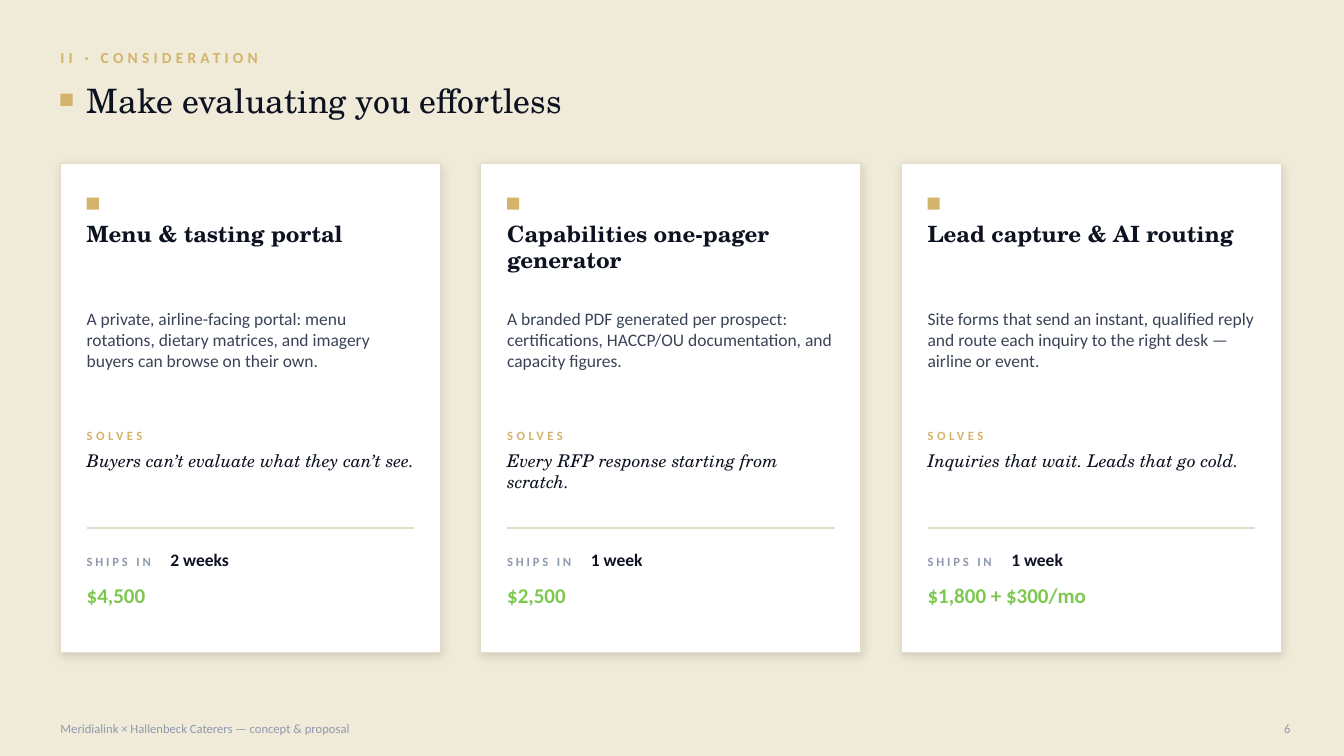
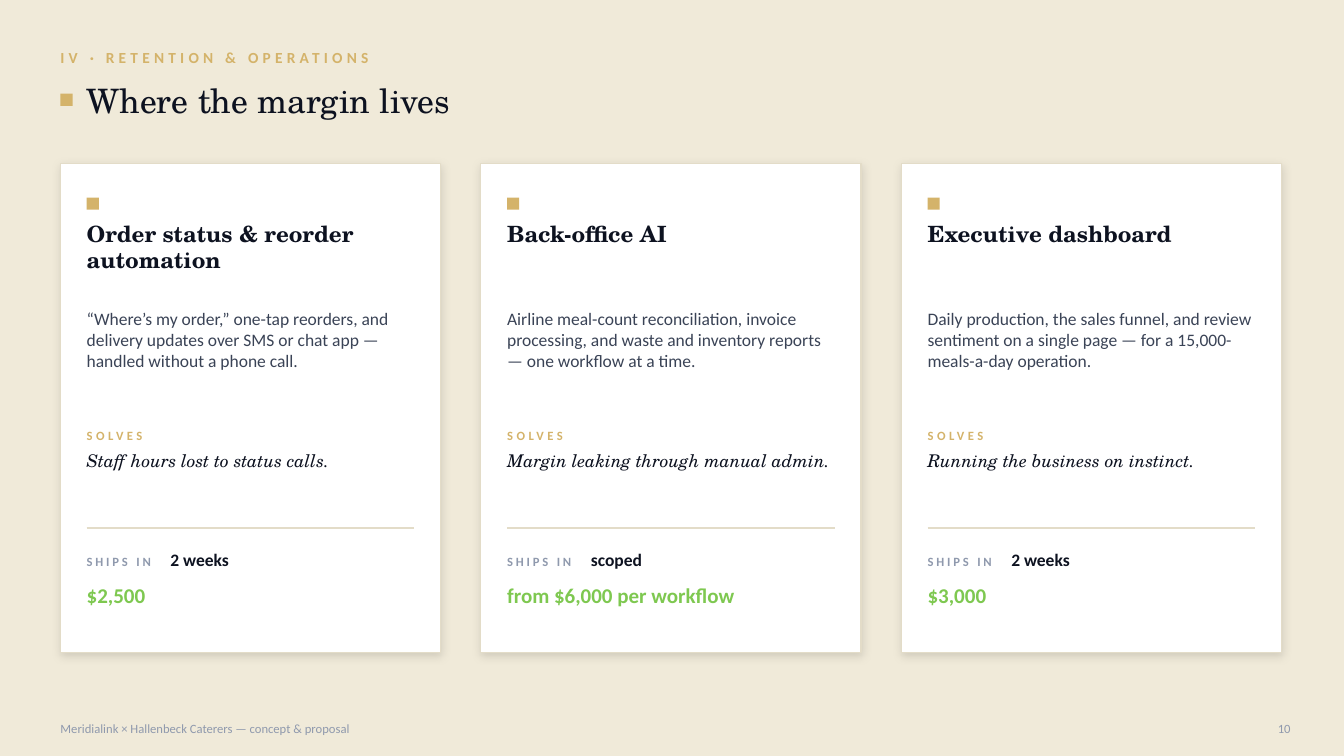
from dataclasses import dataclass

from lxml.etree import SubElement
from pptx import Presentation
from pptx.dml.color import RGBColor as RGB
from pptx.enum.shapes import MSO_CONNECTOR as CONN, MSO_SHAPE as SHAPE
from pptx.enum.text import MSO_ANCHOR as ANCHOR, PP_ALIGN as ALIGN
from pptx.oxml.ns import qn
from pptx.util import Emu, Pt

PX = 9144  # EMU per px, 100 px to the inch
SERIF, SANS = "TeX Gyre Schola", "Calibri"
COLORS = {
    "paper": "F0EAD9",
    "gold": "D4B36A",
    "ink": "0D1220",
    "body": "3A4356",
    "muted": "8F99AD",
    "rule": "E3DCC8",
    "card": "FFFFFF",
    "price": "7EC850",
    "shadow": "000000",
}
MARGIN, INSET, MARKER = 60, 26, 12
CARD_TOP, CARD_W, CARD_H, CARD_GAP = 162, 377, 485, 40
INNER_W = CARD_W - 2 * INSET
VALUE_TAB = 83
FOOTER = "Meridialink × Hallenbeck Caterers — concept & proposal"


@dataclass(frozen=True)
class Style:
    font: dict
    color: str
    spacing: float = 0


@dataclass(frozen=True)
class Offer:
    title: str
    text: str
    solves: str
    ships_in: str
    price: str


@dataclass(frozen=True)
class Page:
    number: int
    section: str
    title: str
    offers: tuple[Offer, ...]


def font(name: str, size: float, bold: bool = False, italic: bool = False) -> dict:
    return {"name": name, "size": Pt(size), "bold": bold, "italic": italic}


STYLES = {
    "section": Style(font(SANS, 11, bold=True), "gold", 3),
    "title": Style(font(SERIF, 24), "ink"),
    "card_title": Style(font(SERIF, 16, bold=True), "ink"),
    "body": Style(font(SANS, 12.5), "body"),
    "solves_label": Style(font(SANS, 9, bold=True), "gold", 2.5),
    "solves": Style(font(SERIF, 12.5, italic=True), "ink"),
    "ships_label": Style(font(SANS, 9, bold=True), "muted", 2),
    "ships_value": Style(font(SANS, 12.5, bold=True), "ink"),
    "price": Style(font(SANS, 15, bold=True), "price"),
    "footer": Style(font(SANS, 9), "muted"),
}

PAGES = (
    Page(6, "II · CONSIDERATION", "Make evaluating you effortless", (
        Offer("Menu & tasting portal",
              "A private, airline-facing portal: menu rotations, dietary matrices, "
              "and imagery buyers can browse on their own.",
              "Buyers can’t evaluate what they can’t see.", "2 weeks", "$4,500"),
        Offer("Capabilities one-pager generator",
              "A branded PDF generated per prospect: certifications, HACCP/OU "
              "documentation, and capacity figures.",
              "Every RFP response starting from scratch.", "1 week", "$2,500"),
        Offer("Lead capture & AI routing",
              "Site forms that send an instant, qualified reply and route each "
              "inquiry to the right desk — airline or event.",
              "Inquiries that wait. Leads that go cold.", "1 week", "$1,800 + $300/mo"),
    )),
    Page(10, "IV · RETENTION & OPERATIONS", "Where the margin lives", (
        Offer("Order status & reorder automation",
              "“Where’s my order,” one-tap reorders, and delivery updates over SMS "
              "or chat app — handled without a phone call.",
              "Staff hours lost to status calls.", "2 weeks", "$2,500"),
        Offer("Back-office AI",
              "Airline meal-count reconciliation, invoice processing, and waste and "
              "inventory reports — one workflow at a time.",
              "Margin leaking through manual admin.", "scoped", "from $6,000 per workflow"),
        Offer("Executive dashboard",
              "Daily production, the sales funnel, and review sentiment on a single "
              "page — for a 15,000-meals-a-day operation.",
              "Running the business on instinct.", "2 weeks", "$3,000"),
    )),
)


def px(*lengths: int) -> list[Emu]:
    return [Emu(n * PX) for n in lengths]


def rgb(color: str) -> RGB:
    return RGB.from_string(COLORS[color])


def add_run(p, text: str, style: str) -> None:
    st = STYLES[style]
    r = p.add_run()
    r.text = text
    for name, value in st.font.items():
        setattr(r.font, name, value)
    r.font.color.rgb = rgb(st.color)
    if st.spacing:
        r.font._element.set("spc", str(int(st.spacing * 100)))


def add_text(s, box: tuple[int, int, int, int], *runs: tuple[str, str],
             middle: bool = False, right: bool = False, tab: int = 0) -> None:
    """Add a one-paragraph text box; each run is a (text, style) pair."""
    tf = s.shapes.add_textbox(*px(*box)).text_frame
    settings = {
        "word_wrap": True,
        "vertical_anchor": ANCHOR.MIDDLE if middle else ANCHOR.TOP,
        "margin_left": 0, "margin_top": 0, "margin_right": 0, "margin_bottom": 0,
    }
    for name, value in settings.items():
        setattr(tf, name, value)
    p = tf.paragraphs[0]
    p.alignment = ALIGN.RIGHT if right else ALIGN.LEFT
    if tab:
        tabs = SubElement(p._p.get_or_add_pPr(), qn("a:tabLst"))
        SubElement(tabs, qn("a:tab"), pos=str(tab * PX), algn="l")
    for text, style in runs:
        add_run(p, text, style)


def add_rect(s, box: tuple[int, int, int, int], fill: str, line: str = ""):
    sp = s.shapes.add_shape(SHAPE.RECTANGLE, *px(*box))
    sp.shadow.inherit = False
    sp.fill.solid()
    sp.fill.fore_color.rgb = rgb(fill)
    if line:
        sp.line.color.rgb = rgb(line)
        sp.line.width = Pt(0.75)
    else:
        sp.line.fill.background()
    return sp


def add_marker(s, x: int, y: int) -> None:
    add_rect(s, (x, y, MARKER, MARKER), "gold")


def add_soft_shadow(sp) -> None:
    effects = sp._element.spPr.find(qn("a:effectLst"))
    shadow = SubElement(effects, qn("a:outerShdw"), blurRad=str(Pt(7)), dist=str(Pt(2)),
                        dir="5400000", algn="bl", rotWithShape="0")
    color = SubElement(shadow, qn("a:srgbClr"), val=COLORS["shadow"])
    SubElement(color, qn("a:alpha"), val="13000")


def add_rule(s, x: int, y: int, width: int) -> None:
    line = s.shapes.add_connector(CONN.STRAIGHT, *px(x, y, x + width, y))
    line.line.color.rgb = rgb("rule")
    line.line.width = Pt(1)
    SubElement(line._element.spPr, qn("a:effectLst"))


def add_card(s, left: int, offer: Offer) -> None:
    add_soft_shadow(add_rect(s, (left, CARD_TOP, CARD_W, CARD_H), "card", "rule"))
    x = left + INSET
    add_marker(s, x, 196)
    add_text(s, (x, 218, INNER_W, 78), (offer.title, "card_title"))
    add_text(s, (x, 306, INNER_W, 106), (offer.text, "body"))
    add_text(s, (x, 420, INNER_W, 24), ("SOLVES", "solves_label"), middle=True)
    add_text(s, (x, 446, INNER_W, 62), (offer.solves, "solves"))
    add_rule(s, x, 524, INNER_W)
    add_text(s, (x, 540, INNER_W, 30), ("SHIPS IN\t", "ships_label"),
             (offer.ships_in, "ships_value"), middle=True, tab=VALUE_TAB)
    add_text(s, (x, 578, INNER_W, 52), (offer.price, "price"))


def add_header(s, page: Page) -> None:
    add_text(s, (MARGIN, 42, 800, 30), (page.section, "section"), middle=True)
    add_marker(s, MARGIN, 93)
    add_text(s, (MARGIN + INSET, 72, 1150, 55), (page.title, "title"), middle=True)


def add_footer(s, number: int) -> None:
    add_text(s, (MARGIN, 708, 650, 30), (FOOTER, "footer"), middle=True)
    add_text(s, (1240, 708, 40, 30), (str(number), "footer"), middle=True, right=True)


def add_page(prs, page: Page) -> None:
    s = prs.slides.add_slide(prs.slide_layouts[6])
    s.background.fill.solid()
    s.background.fill.fore_color.rgb = rgb("paper")
    add_header(s, page)
    for i, offer in enumerate(page.offers):
        add_card(s, MARGIN + i * (CARD_W + CARD_GAP), offer)
    add_footer(s, page.number)


def main() -> None:
    prs = Presentation()
    prs.slide_width, prs.slide_height = px(1333, 750)
    for page in PAGES:
        add_page(prs, page)
    prs.save("out.pptx")


if __name__ == "__main__":
    main()
